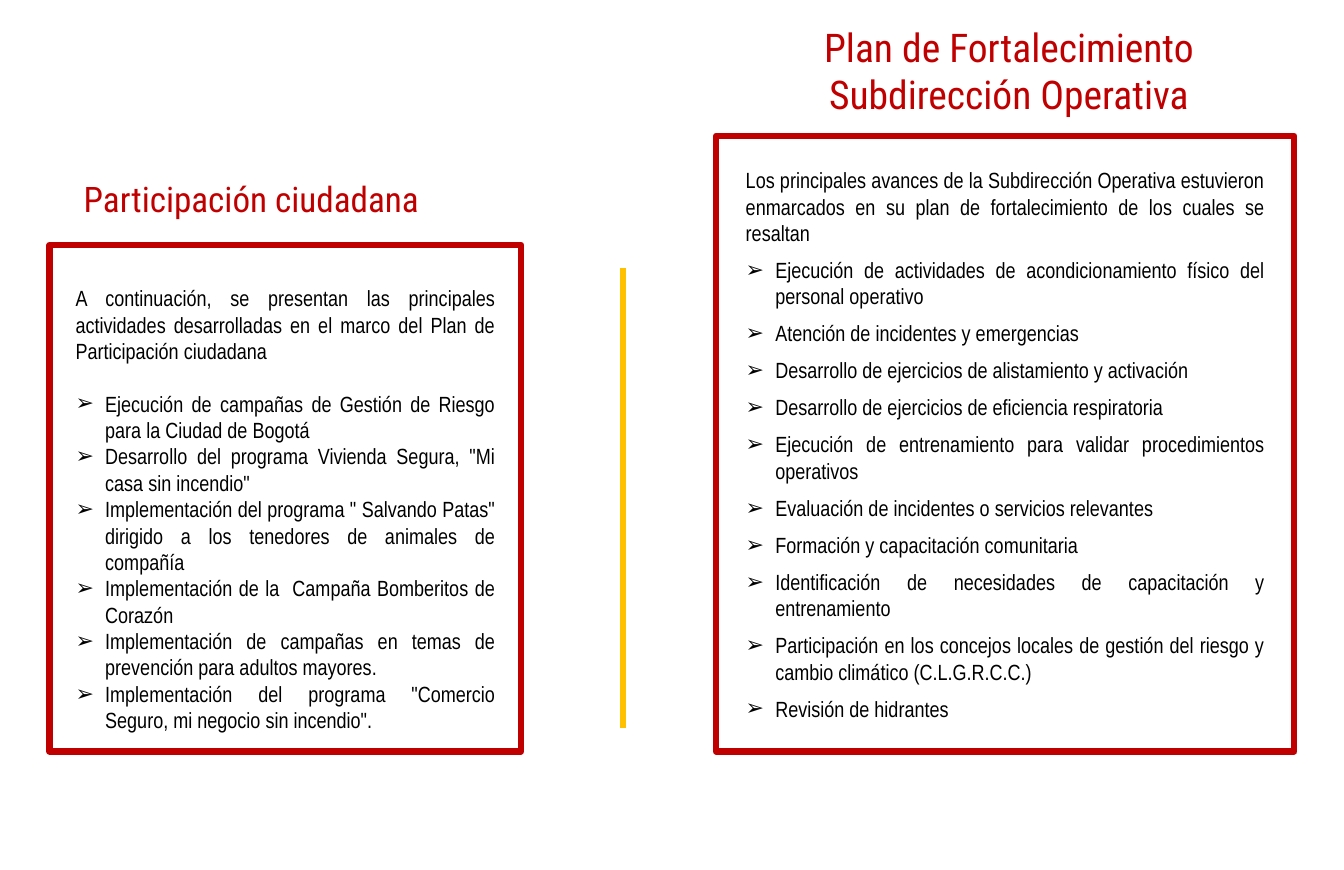
from lxml import etree
from pptx import Presentation
from pptx import util as u
from pptx.dml.color import RGBColor
from pptx.enum import shapes, text
from pptx.oxml.ns import qn

COLORS = {"red": "C00000", "gold": "FFC000", "ink": "000000"}
HEADING_FONT, BODY_FONT = "Roboto Condensed", "Arial Narrow"
INDENT = u.Cm(0.95)

CITIZEN_INTRO = ("A continuación, se presentan las principales actividades "
                 "desarrolladas en el marco del Plan de Participación ciudadana")
CITIZEN_ITEMS = [
    "Ejecución de campañas de Gestión de Riesgo para la Ciudad de Bogotá",
    'Desarrollo del programa Vivienda Segura, "Mi casa sin incendio"',
    'Implementación del programa " Salvando Patas" dirigido a los tenedores '
    "de animales de compañía",
    "Implementación de la  Campaña Bomberitos de Corazón",
    "Implementación de campañas en temas de prevención para adultos mayores.",
    'Implementación del programa "Comercio Seguro, mi negocio sin incendio".',
]
PLAN_INTRO = ("Los principales avances de la Subdirección Operativa estuvieron "
              "enmarcados en su plan de fortalecimiento de los cuales se resaltan")
PLAN_ITEMS = [
    "Ejecución de actividades de acondicionamiento físico del personal operativo",
    "Atención de incidentes y emergencias",
    "Desarrollo de ejercicios de alistamiento y activación",
    "Desarrollo de ejercicios de eficiencia respiratoria",
    "Ejecución de entrenamiento para validar procedimientos operativos",
    "Evaluación de incidentes o servicios relevantes",
    "Formación y capacitación comunitaria",
    "Identificación de necesidades de capacitación y entrenamiento",
    "Participación en los concejos locales de gestión del riesgo y cambio "
    "climático (C.L.G.R.C.C.)",
    "Revisión de hidrantes",
]


def color(name):
    return RGBColor.from_string(COLORS[name])


def add_bullet(para):
    properties = para._p.get_or_add_pPr()
    properties.set("marL", str(INDENT))
    properties.set("indent", str(-INDENT))
    etree.SubElement(properties, qn("a:buFont"), typeface="Arial")
    etree.SubElement(properties, qn("a:buChar"), char="➢")


def write(para, words, font, size, ink, align, after=0, bullet=False):
    if bullet:
        add_bullet(para)
    para.alignment = align
    para.space_after = u.Pt(after)
    span = para.add_run()
    span.text = words
    span.font.name = font
    span.font.size = u.Pt(size)
    span.font.color.rgb = color(ink)


def add_text_box(page, left, top, width, height):
    box = page.shapes.add_textbox(u.Cm(left), u.Cm(top), u.Cm(width), u.Cm(height))
    box.text_frame.word_wrap = True
    return box.text_frame


def add_panel(page, box, inset, intro, items, intro_after, item_after):
    """Draw a red frame with an intro and a bulleted list inset by (x, y)."""
    left, top, width, height = box
    frame = page.shapes.add_shape(shapes.MSO_SHAPE.RECTANGLE, *map(u.Cm, box))
    frame.shadow.inherit = False
    frame.fill.background()
    frame.line.color.rgb = color("red")
    frame.line.width = u.Pt(6)

    inset_x, inset_y = inset
    body = add_text_box(page, left + inset_x, top + inset_y,
                        width - 2 * inset_x, height - 2 * inset_y)
    style = dict(font=BODY_FONT, size=20, ink="ink", align=text.PP_ALIGN.JUSTIFY)
    write(body.paragraphs[0], intro, after=intro_after, **style)
    for item in items:
        write(body.add_paragraph(), item, after=item_after, bullet=True, **style)


def place_title(page, box, lines):
    title = page.shapes.title
    title.left, title.top, title.width, title.height = map(u.Cm, box)
    body = title.text_frame
    body.auto_size = text.MSO_AUTO_SIZE.NONE
    body.vertical_anchor = text.MSO_ANCHOR.MIDDLE
    body.margin_left = body.margin_right = u.Cm(0.3)
    body.margin_top = body.margin_bottom = u.Cm(0.15)
    for index, line in enumerate(lines):
        para = body.add_paragraph() if index else body.paragraphs[0]
        write(para, line, HEADING_FONT, 36, "red", text.PP_ALIGN.CENTER)


def add_divider(page, x, top, bottom):
    divider = page.shapes.add_connector(
        shapes.MSO_CONNECTOR.STRAIGHT, u.Cm(x), u.Cm(top), u.Cm(x), u.Cm(bottom))
    divider.line.color.rgb = color("gold")
    divider.line.width = u.Pt(6)
    etree.SubElement(divider._element.spPr, qn("a:effectLst"))


def add_citizen_region(page, left, top, width, height):
    heading = add_text_box(page, left + 0.84, top - 2.31, 12.93, 1.63)
    write(heading.paragraphs[0], "Participación ciudadana", HEADING_FONT, 32,
          "red", text.PP_ALIGN.LEFT)
    add_panel(page, (left, top, width, height), (0.58, 1.15),
              CITIZEN_INTRO, CITIZEN_ITEMS, intro_after=24, item_after=0)


def add_plan_region(page, left, top, width, height):
    place_title(page, (left - 1.88, top - 3.81, 22.58, 3.38),
                ["Plan de Fortalecimiento", "Subdirección Operativa"])
    add_panel(page, (left, top, width, height), (0.7, 0.86),
              PLAN_INTRO, PLAN_ITEMS, intro_after=9.7, item_after=9.7)


def main():
    deck = Presentation()
    deck.slide_width, deck.slide_height = u.Cm(43.18), u.Cm(27.94)
    page = deck.slides.add_slide(deck.slide_layouts.get_by_name("Title Only"))
    add_plan_region(page, 23.01, 4.37, 18.57, 19.76)
    add_divider(page, 20.02, 8.61, 23.37)
    add_citizen_region(page, 1.6, 7.87, 15.14, 16.26)
    deck.save("out.pptx")


if __name__ == "__main__":
    main()
